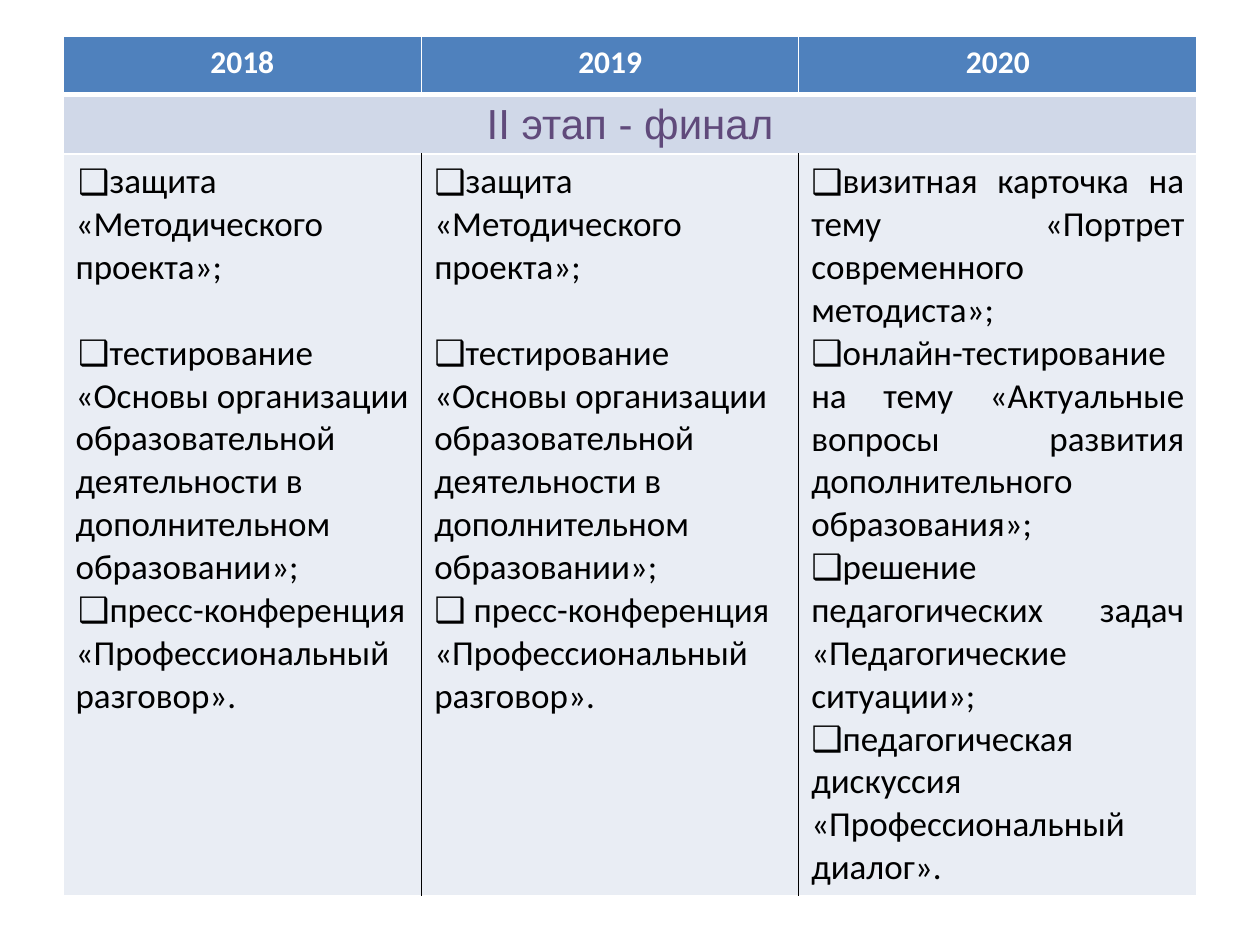
from dataclasses import dataclass

from lxml.etree import SubElement
from pptx import Presentation
from pptx.dml.color import RGBColor as Rgb
from pptx.enum.text import PP_ALIGN as Align
from pptx.oxml import parse_xml
from pptx.oxml.ns import nsdecls, qn
from pptx.util import Cm, Pt


@dataclass(frozen=True)
class Theme:
    header_fill: str = "4F81BD"
    stage_fill: str = "D0D8E8"
    body_fill: str = "E9EDF4"
    header_text: str = "FFFFFF"
    stage_text: str = "604A7B"
    body_text: str = "000000"
    light_rule: str = "FFFFFF"
    dark_rule: str = "000000"
    main_font: str = "Calibri"
    stage_font: str = "Arial"
    header_size: int = 18
    stage_size: int = 24
    body_size: int = 20


THEME = Theme()

YEARS = ["2018", "2019", "2020"]
STAGE = "II этап - финал"
DEFENCE = "защита «Методического проекта»;"
TESTING = ("тестирование «Основы организации образовательной деятельности "
           "в дополнительном образовании»;")
PRESS = "пресс-конференция «Профессиональный разговор»."
CONTESTS = [
    {"tasks": [DEFENCE, TESTING, PRESS], "indent": 0.05, "gap": 24.4, "align": Align.LEFT},
    {"tasks": [DEFENCE, TESTING, " " + PRESS], "indent": 0, "gap": 24.4, "align": Align.LEFT},
    {"tasks": [
        "визитная карточка на тему «Портрет современного методиста»;",
        "онлайн-тестирование на тему «Актуальные вопросы развития "
        "дополнительного образования»;",
        "решение педагогических задач «Педагогические ситуации»;",
        "педагогическая дискуссия «Профессиональный диалог».",
    ], "indent": 0, "gap": 0, "align": Align.JUSTIFY},
]

LEFT, TOP = 1.27, 0.74
COLUMN_WIDTHS = [7.23, 7.6, 8.03]
ROW_HEIGHTS = [1.17, 1.17, 14.27]


def write(paragraph, text, *, size, color, font=THEME.main_font, bold=False,
          align=Align.CENTER, bullet=None, indent=0, before=0):
    if bullet:
        properties = paragraph._p.get_or_add_pPr()
        properties.set("marL", "0")
        properties.set("indent", str(Cm(indent)))
        SubElement(properties, qn("a:buFont"), typeface=THEME.stage_font)
        SubElement(properties, qn("a:buChar"), char=bullet)
    paragraph.alignment = align
    if before:
        paragraph.space_before = Pt(before)
    run = paragraph.add_run()
    run.text = text
    run.font.size, run.font.name, run.font.bold = Pt(size), font, bold
    run.font.color.rgb = Rgb.from_string(color)


def paint(cell, fill, *, left=THEME.light_rule, right=THEME.light_rule,
          top_width=1, bottom_width=1):
    cell.fill.solid()
    cell.fill.fore_color.rgb = Rgb.from_string(fill)
    sides = [("L", left, 1), ("R", right, 1),
             ("T", THEME.light_rule, top_width), ("B", THEME.light_rule, bottom_width)]
    for order, (side, color, width) in enumerate(sides):
        border = parse_xml(
            f'<a:ln{side} {nsdecls("a")} w="{Pt(width)}"><a:solidFill>'
            f'<a:srgbClr val="{color}"/></a:solidFill></a:ln{side}>')
        cell._tc.get_or_add_tcPr().insert(order, border)


def main():
    deck = Presentation()
    deck.slide_width, deck.slide_height = Cm(25.4), Cm(19.05)
    slide = deck.slides.add_slide(deck.slide_layouts[6])
    schedule = slide.shapes.add_table(
        len(ROW_HEIGHTS), len(YEARS), Cm(LEFT), Cm(TOP),
        Cm(sum(COLUMN_WIDTHS)), Cm(sum(ROW_HEIGHTS))).table
    for column, width in zip(schedule.columns, COLUMN_WIDTHS):
        column.width = Cm(width)
    for row, height in zip(schedule.rows, ROW_HEIGHTS):
        row.height = Cm(height)

    last = len(YEARS) - 1
    for index, (year, contest) in enumerate(zip(YEARS, CONTESTS)):
        header, stage, body = (schedule.cell(row, index) for row in range(3))
        paint(header, THEME.header_fill, bottom_width=3)
        paint(stage, THEME.stage_fill, top_width=3)
        paint(body, THEME.body_fill,
              left=THEME.dark_rule if index else THEME.light_rule,
              right=THEME.dark_rule if index < last else THEME.light_rule)
        write(header.text_frame.paragraphs[0], year, size=THEME.header_size,
              color=THEME.header_text, bold=True)
        frame = body.text_frame
        for number, task in enumerate(contest["tasks"]):
            paragraph = frame.add_paragraph() if number else frame.paragraphs[0]
            write(paragraph, task, size=THEME.body_size, color=THEME.body_text,
                  align=contest["align"], bullet="❑", indent=contest["indent"],
                  before=contest["gap"] if number == 1 else 0)

    stage = schedule.cell(1, 0)
    stage.merge(schedule.cell(1, last))
    write(stage.text_frame.paragraphs[0], STAGE, size=THEME.stage_size,
          color=THEME.stage_text, font=THEME.stage_font)
    deck.save("out.pptx")


if __name__ == "__main__":
    main()
